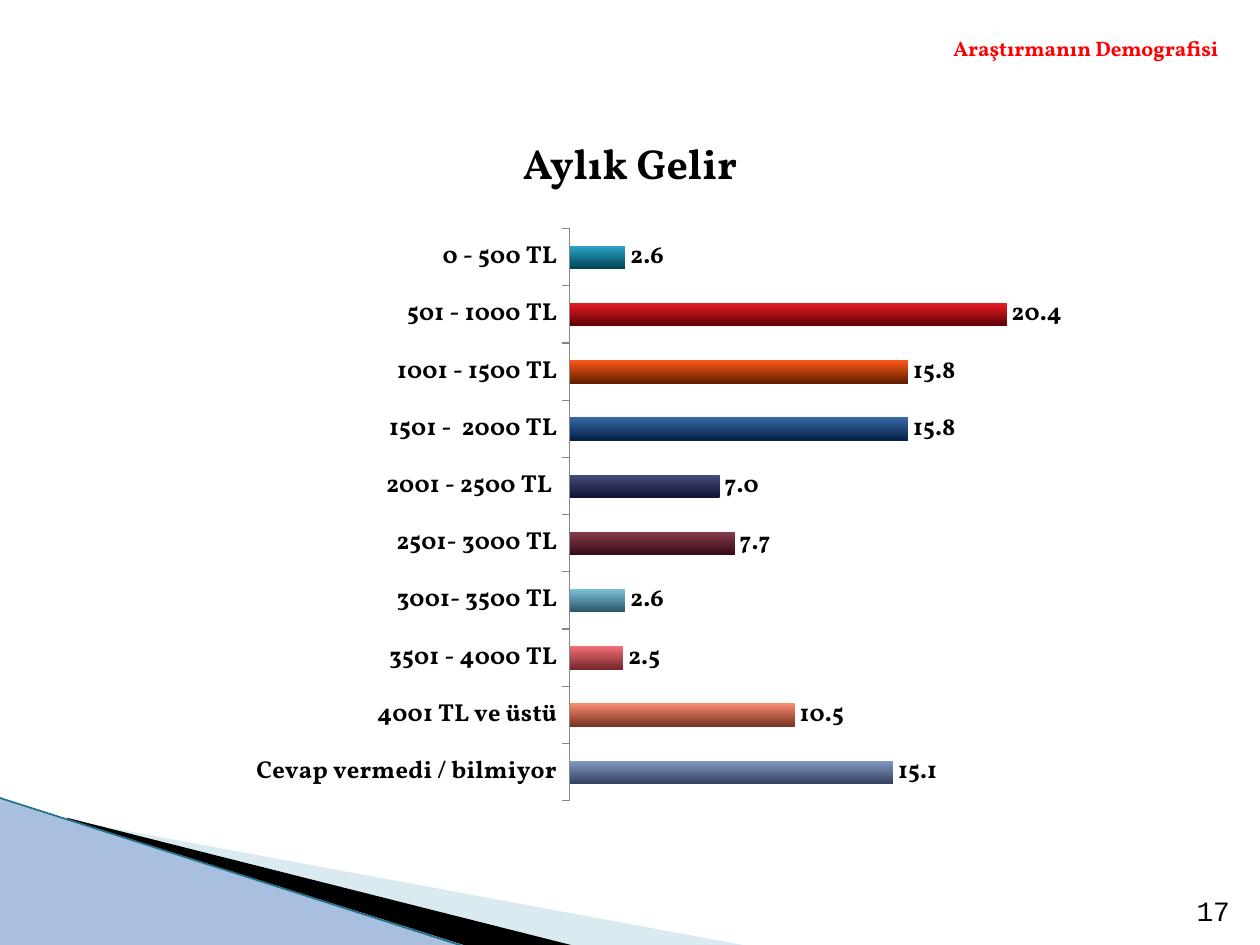
from lxml.etree import SubElement
from pptx import Presentation
from pptx.chart.data import CategoryChartData
from pptx.dml.color import RGBColor
from pptx.enum.chart import XL_CHART_TYPE, XL_LABEL_POSITION, XL_TICK_MARK
from pptx.enum.shapes import MSO_CONNECTOR, MSO_SHAPE
from pptx.enum.text import MSO_ANCHOR, PP_ALIGN
from pptx.oxml import parse_xml
from pptx.oxml.ns import nsdecls, qn
from pptx.util import Inches, Pt

BLACK = RGBColor(0x00, 0x00, 0x00)
RED = RGBColor(0xFF, 0x00, 0x00)
PALE = RGBColor(0xA0, 0xCB, 0xDC)
BLUE = RGBColor(0xA8, 0xBF, 0xDF)
TEAL = RGBColor(0x1F, 0x73, 0x88)
GREY = RGBColor(0x86, 0x86, 0x86)
SERIF = "Vollkorn"

INCOME = [
    ("0 - 500 TL", 2.6, RGBColor(0x2D, 0xA5, 0xCB), RGBColor(0x00, 0x43, 0x55)),
    ("501 - 1000 TL", 20.4, RGBColor(0xEA, 0x1C, 0x24), RGBColor(0x5C, 0x00, 0x06)),
    ("1001 - 1500 TL", 15.8, RGBColor(0xFF, 0x58, 0x18), RGBColor(0x62, 0x20, 0x00)),
    ("1501 -  2000 TL", 15.8, RGBColor(0x38, 0x68, 0xA8), RGBColor(0x04, 0x22, 0x48)),
    ("2001 - 2500 TL ", 7.0, RGBColor(0x48, 0x4C, 0x80), RGBColor(0x12, 0x14, 0x34)),
    ("2501- 3000 TL", 7.7, RGBColor(0x86, 0x3C, 0x4C), RGBColor(0x38, 0x0C, 0x16)),
    ("3001- 3500 TL", 2.6, RGBColor(0x7C, 0xC0, 0xDA), RGBColor(0x2C, 0x58, 0x68)),
    ("3501 - 4000 TL", 2.5, RGBColor(0xF2, 0x70, 0x76), RGBColor(0x78, 0x28, 0x2C)),
    ("4001 TL ve üstü", 10.5, RGBColor(0xFA, 0x8C, 0x70), RGBColor(0x7A, 0x34, 0x24)),
    ("Cevap vermedi / bilmiyor", 15.1, RGBColor(0x84, 0x9C, 0xC8), RGBColor(0x34, 0x42, 0x60)),
]


def box(x, y, w, h):
    return Inches(x), Inches(y), Inches(w), Inches(h)


def style(font, size, color, name=SERIF, bold=True):
    font.name = name
    font.size = Pt(size)
    font.bold = bold
    font.color.rgb = color


def write(shape, text, align, anchor, *look):
    frame = shape.text_frame
    frame.word_wrap = True
    frame.vertical_anchor = anchor
    para = frame.paragraphs[0]
    para.alignment = align
    run = para.add_run()
    run.text = text
    style(run.font, *look)


def paint(shape, color):
    shape.shadow.inherit = False
    shape.fill.solid()
    shape.fill.fore_color.rgb = color
    shape.line.fill.background()


def add_wedge(slide, color, points, alpha=None):
    spots = [(Inches(x), Inches(y)) for x, y in points]
    path = slide.shapes.build_freeform(*spots[0])
    path.add_line_segments(spots[1:], close=True)
    shape = path.convert_to_shape()
    paint(shape, color)
    if alpha:
        tint = shape.fill._xPr.find(".//" + qn("a:srgbClr"))
        SubElement(tint, qn("a:alpha"), val=str(alpha * 1000))


def add_corner(slide):
    add_wedge(slide, PALE, [(0.55, 6.51), (5.95, 7.51), (4.56, 7.51), (0.55, 6.5)], 40)
    add_wedge(slide, BLACK, [(0.53, 6.49), (4.57, 7.51), (3.72, 7.52), (0.54, 6.5)])
    corner = slide.shapes.add_shape(MSO_SHAPE.RIGHT_TRIANGLE, *box(-0.01, 6.33, 3.72, 1.18))
    paint(corner, BLUE)
    edge = slide.shapes.add_connector(MSO_CONNECTOR.STRAIGHT, *box(-0.01, 6.33, 3.71, 7.52))
    edge.line.color.rgb = TEAL
    edge.line.width = Pt(0.95)
    SubElement(edge._element.spPr, qn("a:effectLst"))


def set_plot(chart, x, y, w, h):
    area = chart._chartSpace.chart.plotArea
    old = area.find(qn("c:layout"))
    if old is not None:
        area.remove(old)
    sizes = "".join(f'<c:{key} val="{val}"/>' for key, val in zip("xywh", (x, y, w, h)))
    area.insert(0, parse_xml(
        f'<c:layout {nsdecls("c")}><c:manualLayout><c:layoutTarget val="inner"/>'
        f'<c:xMode val="edge"/><c:yMode val="edge"/>{sizes}</c:manualLayout></c:layout>'))


def add_bars(slide):
    names, values, tops, ends = zip(*INCOME)
    data = CategoryChartData(number_format="0.0")
    data.categories = names
    data.add_series("Series 1", values)
    chart = slide.shapes.add_chart(
        XL_CHART_TYPE.BAR_CLUSTERED, *box(1.06, 1.67, 7.87, 4.83), data).chart
    chart.has_legend = False
    chart.has_title = False
    style(chart.font, 14, BLACK)
    set_plot(chart, 0.44, 0.03, 0.54, 0.94)

    cats = chart.category_axis
    cats.reverse_order = True
    cats.major_tick_mark = XL_TICK_MARK.OUTSIDE
    cats.format.line.color.rgb = GREY
    scale = chart.value_axis
    scale.visible = False
    scale.has_major_gridlines = False
    scale.minimum_scale, scale.maximum_scale = 0, 25

    plot = chart.plots[0]
    plot.gap_width = 150
    plot.vary_by_categories = False
    plot.has_data_labels = True
    labels = plot.data_labels
    labels.show_value = True
    labels.number_format = "0.0"
    labels.number_format_is_linked = False
    labels.position = XL_LABEL_POSITION.OUTSIDE_END
    style(labels.font, 14, BLACK)

    for i, pair in enumerate(zip(tops, ends)):
        fill = plot.series[0].points[i].format.fill
        fill.gradient()
        fill.gradient_angle = 270
        for stop, color in zip(fill.gradient_stops, pair):
            stop.color.rgb = color


def main():
    deck = Presentation()
    deck.slide_width, deck.slide_height = Inches(10), Inches(7.5)
    slide = deck.slides.add_slide(deck.slide_layouts[5])
    add_corner(slide)
    title = slide.shapes.title
    title.left, title.top, title.width, title.height = box(0.5, 0.86, 9, 0.86)
    write(title, "Aylık Gelir", PP_ALIGN.CENTER, MSO_ANCHOR.MIDDLE, 24, BLACK)
    head = slide.shapes.add_textbox(*box(0.86, 0.23, 8.91, 0.3))
    write(head, "Araştırmanın Demografisi", PP_ALIGN.RIGHT, MSO_ANCHOR.TOP, 12, RED)
    page = slide.shapes.add_textbox(*box(9.14, 7.01, 0.72, 0.4))
    write(page, "17", PP_ALIGN.RIGHT, MSO_ANCHOR.BOTTOM, 16, BLACK, "Courier New", False)
    add_bars(slide)
    deck.save("out.pptx")


if __name__ == "__main__":
    main()
